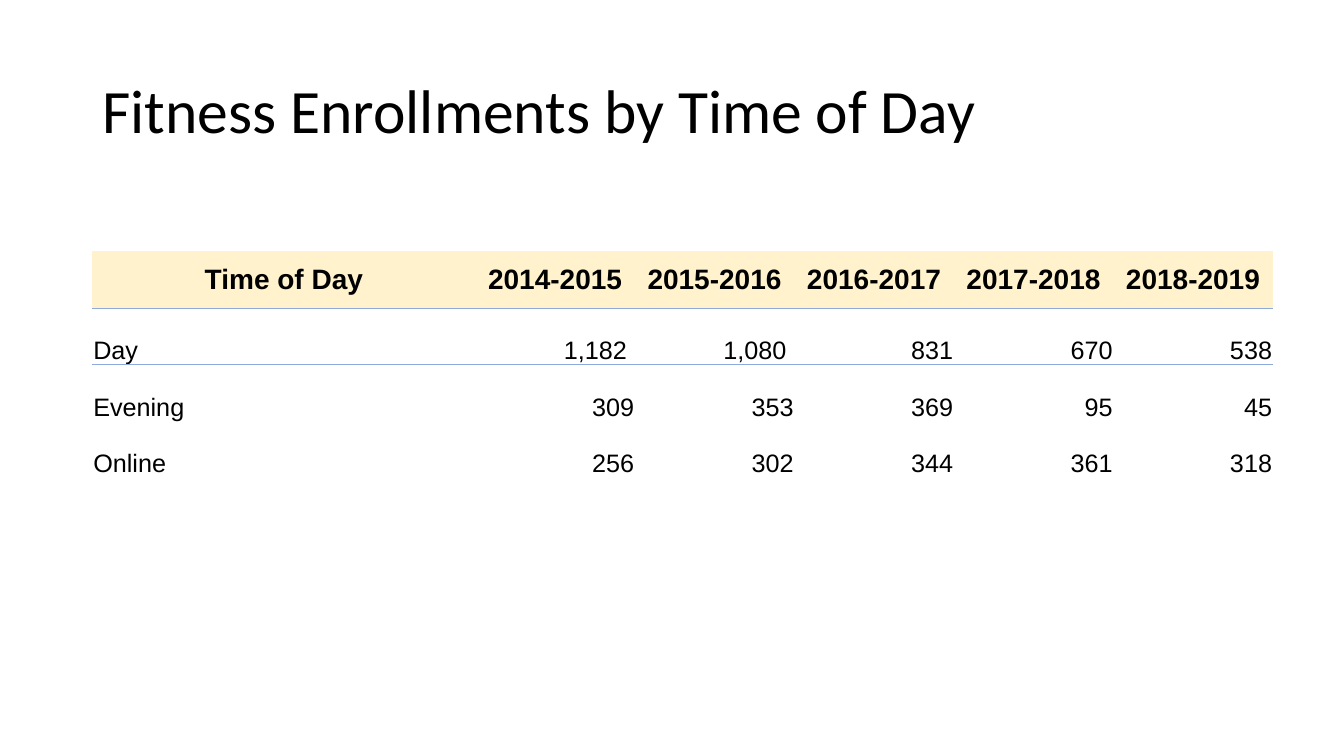
"""Build the slide of fitness enrollments by time of day."""
from dataclasses import dataclass

from pptx import Presentation
from pptx.dml.color import RGBColor as RGB
from pptx.enum.text import MSO_ANCHOR as Anchor, PP_ALIGN as Align
from pptx.oxml import parse_xml
from pptx.oxml.ns import nsdecls
from pptx.util import Cm, Pt


@dataclass(frozen=True)
class Theme:
    ink: RGB = RGB.from_string("000000")
    header_fill: RGB = RGB.from_string("FFF2CC")
    rule: str = "8EA9DB"
    title_size: int = Pt(44)
    header_size: int = Pt(20)
    body_size: int = Pt(18)
    title_font: str = "Calibri"
    table_font: str = "Arial"


theme = Theme()
NO_STYLE = "{2D5ABB26-0587-4C30-8999-92F81FD0307C}"
ROW_HEIGHT = Cm(1.43)
LABEL_WIDTH, YEAR_WIDTH = Cm(9.65), Cm(4.02)
EDGE, THOUSANDS_EDGE = Cm(0.02), Cm(0.2)

enrollments = [
    ["Time of Day", "2014-2015", "2015-2016", "2016-2017", "2017-2018", "2018-2019"],
    ["Day", "1,182", "1,080", "831", "670", "538"],
    ["Evening", "309", "353", "369", "95", "45"],
    ["Online", "256", "302", "344", "361", "318"],
]


def apply(target, values):
    for key, value in values.items():
        setattr(target, key, value)


def add_rule(cell, side):
    cell.fill._xPr.insert(0, parse_xml(
        f'<a:{side} {nsdecls("a")} w="{Pt(0.5)}"><a:solidFill>'
        f'<a:srgbClr val="{theme.rule}"/></a:solidFill></a:{side}>'))


deck = Presentation()
apply(deck, {"slide_width": Cm(33.87), "slide_height": Cm(19.05)})
slide = deck.slides.add_slide(deck.slide_layouts[5])

heading = slide.shapes.title
apply(heading, {"left": Cm(2.33), "top": Cm(1.01), "width": Cm(29.21), "height": Cm(3.68)})
heading.text_frame.text = "Fitness Enrollments by Time of Day"
heading.text_frame.vertical_anchor = Anchor.MIDDLE
heading_line = heading.text_frame.paragraphs[0]
apply(heading_line, {"alignment": Align.LEFT, "line_spacing": 0.9})
apply(heading_line.runs[0].font, {"name": theme.title_font, "size": theme.title_size})
heading_line.runs[0].font.color.rgb = theme.ink

year_count = len(enrollments[0]) - 1
table = slide.shapes.add_table(
    len(enrollments), year_count + 1, Cm(2.33), Cm(6.33),
    LABEL_WIDTH + year_count * YEAR_WIDTH, len(enrollments) * ROW_HEIGHT).table
table.horz_banding = False
table._tbl.tblPr[0].text = NO_STYLE
for column_index, column in enumerate(table.columns):
    column.width = YEAR_WIDTH if column_index else LABEL_WIDTH

for row_index, values in enumerate(enrollments):
    is_header = row_index == 0
    table.rows[row_index].height = ROW_HEIGHT
    for column_index, value in enumerate(values):
        cell = table.cell(row_index, column_index)
        cell.text = value
        apply(cell, {
            "margin_left": EDGE, "margin_top": EDGE, "margin_bottom": 0,
            "margin_right": THOUSANDS_EDGE if "," in value else EDGE,
            "vertical_anchor": Anchor.MIDDLE if is_header else Anchor.BOTTOM})
        line = cell.text_frame.paragraphs[0]
        body_align = Align.RIGHT if column_index else Align.LEFT
        line.alignment = Align.CENTER if is_header else body_align
        font = line.runs[0].font
        apply(font, {"name": theme.table_font, "bold": is_header,
                     "size": theme.header_size if is_header else theme.body_size})
        font.color.rgb = theme.ink
        if is_header:
            cell.fill.solid()
            cell.fill.fore_color.rgb = theme.header_fill
            add_rule(cell, "lnB")
        else:
            cell.fill.background()
        if row_index == 1:
            add_rule(cell, "lnT")

deck.save("out.pptx")
